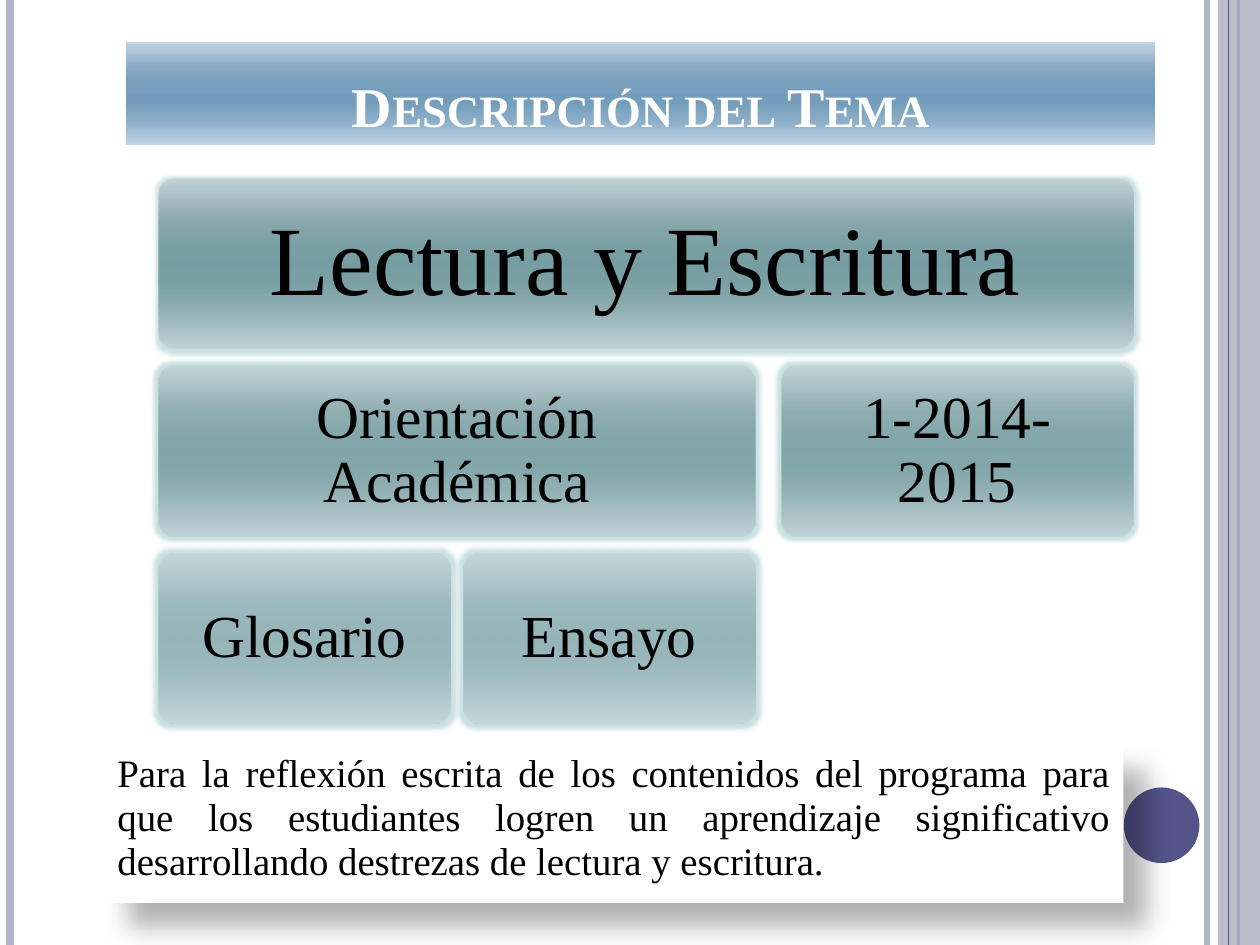
from lxml import etree
from pptx import Presentation
from pptx.dml.color import RGBColor
from pptx.enum.shapes import MSO_CONNECTOR, MSO_SHAPE
from pptx.enum.text import MSO_ANCHOR, PP_ALIGN
from pptx.oxml.ns import qn
from pptx.util import Pt

RECT, ROUND, OVAL = MSO_SHAPE.RECTANGLE, MSO_SHAPE.ROUNDED_RECTANGLE, MSO_SHAPE.OVAL
STRAIGHT = MSO_CONNECTOR.STRAIGHT
TOP, MIDDLE, BOTTOM = MSO_ANCHOR.TOP, MSO_ANCHOR.MIDDLE, MSO_ANCHOR.BOTTOM
CENTER, JUSTIFY = PP_ALIGN.CENTER, PP_ALIGN.JUSTIFY

# Content
TITLE = "Descripción del Tema"
BODY = ("Para la reflexión escrita de los contenidos del programa para que los "
        "estudiantes logren un aprendizaje significativo desarrollando destrezas "
        "de lectura y escritura.")
# Each row: opacity %, text size, inset, boxes as (text, first column, columns)
ROWS = [
    (80, 56, 16.5, [("Lectura y Escritura", 0, 3)]),
    (70, 34, 10, [("Orientación Académica", 0, 2), ("1-2014-2015", 2, 1)]),
    (50, 34, 10, [("Glosario", 0, 1), ("Ensayo", 1, 1)]),
]

# Style
FONT = "Times New Roman"
COLORS = {"white": "FFFFFF", "black": "000000", "bar": "B3B4C4",
          "accent": "53548A", "glow": "A5CBCE"}
STOPS = (0, 25, 40, 50, 60, 75, 100)
TITLE_GRAD = ("C2D4E4", "87A9C3", "759FBC", "739DBB", "759FBC", "89ACC6", "C1D4E6")
BOX_GRAD = ("C1D1D3", "7C9CA0", "669095", "638E93", "669095", "80A1A5", "C0D1D4")
SLIDE_W, SLIDE_H = 720, 540
COLUMNS = [(90.5, 167), (264.7, 167), (446.5, 201)]  # left, width
ROW_TOP, ROW_H, ROW_PITCH = 102.2, 97.2, 107
# Vertical rules: x, width, colour
RULES = [(689.8, 3, "bar"), (5.8, 4.5, "bar"), (707.8, 1.5, "accent"), (702, 0.75, "accent")]


def rgb(name):
    return RGBColor.from_string(COLORS[name])


def add_color(parent, value, opacity=100):
    clr = etree.SubElement(parent, qn("a:srgbClr"), val=value)
    if opacity < 100:
        etree.SubElement(clr, qn("a:alpha"), val=str(opacity * 1000))


def add_shape(kind, x, y, w, h, color=None, grad=None, opacity=100):
    sp = slide.shapes.add_shape(kind, Pt(x), Pt(y), Pt(w), Pt(h))
    sp.shadow.inherit = False
    sp.line.fill.background()
    if grad:
        sp.fill.gradient()
        sp.fill.gradient_angle = 270
        stops = sp.element.spPr.find(".//" + qn("a:gsLst"))
        for gs in list(stops):
            stops.remove(gs)
        for pos, value in zip(STOPS, grad):
            gs = etree.SubElement(stops, qn("a:gs"), pos=str(pos * 1000))
            add_color(gs, value, opacity)
    else:
        sp.fill.solid()
        sp.fill.fore_color.rgb = rgb(color)
        if opacity < 100:
            clr = sp.element.spPr.find(qn("a:solidFill"))[0]
            etree.SubElement(clr, qn("a:alpha"), val=str(opacity * 1000))
    return sp


def add_effect(sp, tag, color, opacity, **attrs):
    effects = sp.element.spPr.find(qn("a:effectLst"))
    add_color(etree.SubElement(effects, qn(tag), **attrs), COLORS[color], opacity)


def set_text(sp, text, size, color="black", bold=False, small_caps=False, align=CENTER,
             anchor=MIDDLE, spacing=1.0, before=0, insets=(7.2, 3.6)):
    tf = sp.text_frame
    tf.word_wrap = True
    tf.vertical_anchor = anchor
    tf.margin_left = tf.margin_right = Pt(insets[0])
    tf.margin_top = tf.margin_bottom = Pt(insets[1])
    p = tf.paragraphs[0]
    p.alignment, p.line_spacing, p.space_before = align, spacing, Pt(before)
    r = p.add_run()
    r.text = text
    r.font.name, r.font.size, r.font.bold = FONT, Pt(size), bold
    r.font.color.rgb = rgb(color)
    if small_caps:
        r.font._element.set("cap", "small")


def add_rule(x, width, color):
    line = slide.shapes.add_connector(STRAIGHT, Pt(x), 0, Pt(x), Pt(SLIDE_H))
    line.line.width = Pt(width)
    line.line.color.rgb = rgb(color)
    etree.SubElement(line._element.spPr, qn("a:effectLst"))


prs = Presentation()
prs.slide_width, prs.slide_height = Pt(SLIDE_W), Pt(SLIDE_H)
slide = prs.slides.add_slide(prs.slide_layouts[6])

# Side decoration: the last rule lies over the translucent band
for rule in RULES[:-1]:
    add_rule(*rule)
add_shape(RECT, 696, 0, 24, SLIDE_H, "bar", opacity=87)
add_rule(*RULES[-1])
add_shape(OVAL, 642.2, 450, 43.2, 43.2, "accent")

# Title
sp = add_shape(RECT, 72, 24, 588, 59, grad=TITLE_GRAD)
set_text(sp, TITLE, 32, "white", bold=True, small_caps=True, anchor=BOTTOM)

# Description
sp = add_shape(RECT, 60, 426, 582, 90, "white")
add_effect(sp, "a:outerShdw", "black", 30, blurRad=str(Pt(15)), dist=str(Pt(18)),
           dir=str(45 * 60000), algn="tl", rotWithShape="0")
set_text(sp, BODY, 22.2, align=JUSTIFY, anchor=TOP, spacing=0.95, before=6)

# Hierarchy of topics
for i, (opacity, size, inset, boxes) in enumerate(ROWS):
    for text, first, span in boxes:
        left = COLUMNS[first][0]
        last_left, last_w = COLUMNS[first + span - 1]
        sp = add_shape(ROUND, left, ROW_TOP + i * ROW_PITCH, last_left + last_w - left, ROW_H,
                       grad=BOX_GRAD, opacity=opacity)
        sp.adjustments[0] = 0.1
        add_effect(sp, "a:glow", "glow", 60, rad=str(Pt(5)))
        set_text(sp, text, size, spacing=0.9, insets=(inset, inset))

prs.save("out.pptx")
